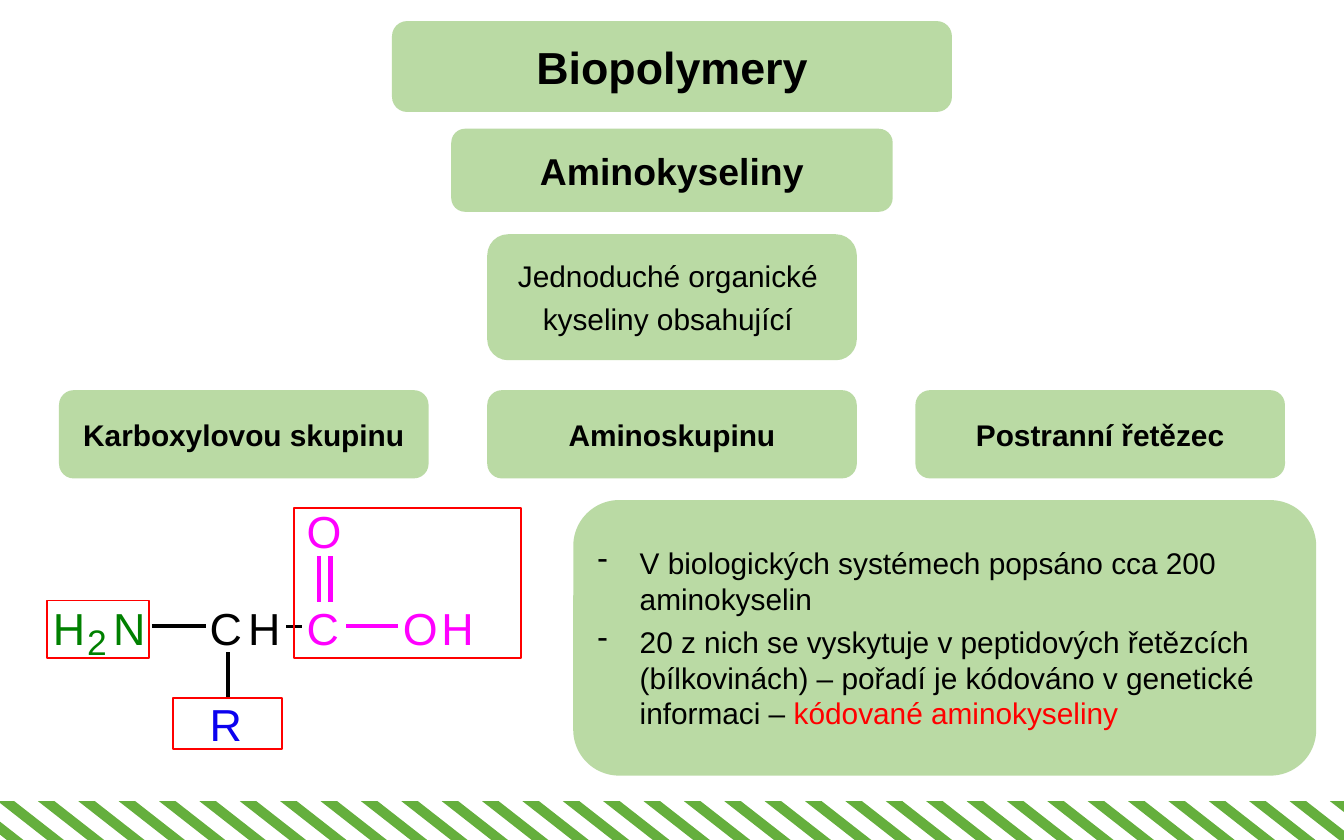
from typing import NamedTuple

from lxml.etree import SubElement as sub
from pptx import Presentation
from pptx.dml.color import RGBColor as RGB
from pptx.enum.shapes import MSO_CONNECTOR as LINK, MSO_SHAPE as FORM
from pptx.enum.text import MSO_ANCHOR as ANCHOR, MSO_AUTO_SIZE as FIT, PP_ALIGN as ALIGN
from pptx.oxml.ns import qn
from pptx.util import Pt

WIDE, HIGH = 720, 450
LEAF, GRASS = "A9D18E", "65AF3D"
BLACK, RED, PINK, GREEN, BLUE = "000000", "FF0000", "FF00FF", "008000", "0C01EF"
Point = tuple[float, float]


class Box(NamedTuple):
    x: float
    y: float
    w: float
    h: float


class Card(NamedTuple):
    box: Box
    lines: list[str]
    size: float
    bold: bool = True


class Bond(NamedTuple):
    start: Point
    end: Point
    color: str
    width: float = 2.25


class Atom(NamedTuple):
    text: str
    mid: float
    top: float
    color: str
    size: float = 24


def mid_box(y: float, w: float, h: float, shift: float = 0) -> Box:
    return Box((WIDE - w) / 2 + shift, y, w, h)


CARDS = [
    Card(mid_box(11.3, 300, 48.7), ["Biopolymery"], 24),
    Card(mid_box(125.5, 198, 67.5), ["Jednoduché organické ", "kyseliny obsahující "], 16, False),
    Card(mid_box(69, 236.5, 44.5), ["Aminokyseliny"], 20),
] + [
    Card(mid_box(209, 198, 47.3, 229.4 * step), [text], 16)
    for step, text in zip((-1, 0, 1), ("Karboxylovou skupinu", "Aminoskupinu", "Postranní řetězec"))
]
NOTE = Box(307.1, 267.9, 398, 147.6)

ROW, AXIS = 321.8, 335.5
BONDS = [
    Bond((81.4, AXIS), (110.4, AXIS), BLACK),
    Bond((153.4, AXIS), (162, AXIS), BLACK, 1.5),
    Bond((122.2, 349.5), (122.2, 373.6), BLACK),
    Bond((185.5, AXIS), (213, AXIS), PINK),
    Bond((170.7, 322.5), (170.7, 298), PINK),
    Bond((177.1, 322.5), (177.1, 298), PINK),
]
ATOMS = [
    Atom("H", 36.3, ROW, GREEN),
    Atom("2", 53, 332, GREEN, 19),
    Atom("N", 68.7, ROW, GREEN),
    Atom("C", 120.4, ROW, BLACK),
    Atom("H", 141, ROW, BLACK),
    Atom("C", 172.3, ROW, PINK),
    Atom("R", 120.4, 373, BLUE),
    Atom("O", 223.8, ROW, PINK),
    Atom("H", 244.5, ROW, PINK),
    Atom("O", 172.3, 270, PINK),
]
FRAMES = [
    Box(157.5, 272.2, 121.8, 80.5),
    Box(25.2, 321.7, 54.7, 31),
    Box(92.7, 374, 58.5, 27.2),
]


def paint(fill, color: str) -> None:
    fill.solid()
    fill.fore_color.rgb = RGB.from_string(color)


def write(frame, text: str, *, size: float = 16, color: str = BLACK, bold: bool = False,
          align=ALIGN.LEFT, gap: float = 0, dash: bool = False, join: bool = False) -> None:
    para = frame.paragraphs[-1]
    if not join:
        if para.runs:
            para = frame.add_paragraph()
            para.space_before = Pt(gap)
        para.alignment = align
        if dash:
            props = para._p.get_or_add_pPr()
            props.set("marL", str(Pt(22.5)))
            props.set("indent", str(-Pt(22.5)))
            sub(props, qn("a:buChar")).set("char", "-")
    run = para.add_run()
    run.text = text
    run.font.name, run.font.size, run.font.bold = "Arial", Pt(size), bold
    paint(run.font.fill, color)


def add_panel(slide, box: Box):
    shape = slide.shapes.add_shape(FORM.ROUNDED_RECTANGLE, *map(Pt, box))
    shape.shadow.inherit = False
    paint(shape.fill, LEAF)
    tint = shape.element.spPr.find(".//" + qn("a:srgbClr"))
    sub(tint, qn("a:alpha")).set("val", "80000")
    shape.line.fill.background()
    frame = shape.text_frame
    frame.word_wrap = True
    frame.vertical_anchor = ANCHOR.MIDDLE
    frame.margin_left = frame.margin_right = Pt(5.9)
    frame.margin_top = frame.margin_bottom = Pt(2.95)
    return frame


def add_card(slide, card: Card) -> None:
    frame = add_panel(slide, card.box)
    for line in card.lines:
        write(frame, line, size=card.size, bold=card.bold, align=ALIGN.CENTER, gap=3.7)


def add_bond(slide, bond: Bond) -> None:
    line = slide.shapes.add_connector(LINK.STRAIGHT, *map(Pt, bond.start + bond.end))
    paint(line.line.fill, bond.color)
    line.line.width = Pt(bond.width)
    sub(line._element.spPr, qn("a:effectLst"))


def add_atom(slide, atom: Atom) -> None:
    wide = atom.size * 2 / 3
    frame = slide.shapes.add_textbox(
        Pt(atom.mid - wide / 2), Pt(atom.top), Pt(wide), Pt(atom.size * 1.1)).text_frame
    frame.margin_left = frame.margin_right = frame.margin_top = frame.margin_bottom = Pt(0)
    frame.word_wrap = False
    frame.auto_size = FIT.SHAPE_TO_FIT_TEXT
    write(frame, atom.text, size=atom.size, color=atom.color)


def add_frame(slide, box: Box) -> None:
    shape = slide.shapes.add_shape(FORM.RECTANGLE, *map(Pt, box))
    shape.shadow.inherit = False
    shape.fill.background()
    paint(shape.line.fill, RED)
    shape.line.width = Pt(1)


def clip(points: list[Point], edge: float, sign: int) -> list[Point]:
    kept = []
    for (ax, ay), (bx, by) in zip(points, points[1:] + points[:1]):
        if sign * (ax - edge) >= 0:
            kept.append((ax, ay))
        if (ax - edge) * (bx - edge) < 0:
            kept.append((edge, ay + (by - ay) * (edge - ax) / (bx - ax)))
    return kept


def add_stripe(slide, x: float) -> None:
    top, wide, lean = 429.2, 8.9, 26.6
    points = [(x, top), (x + wide, top), (x + wide + lean, HIGH), (x + lean, HIGH)]
    points = clip(clip(points, 0, 1), WIDE, -1)
    spots = [(Pt(px), Pt(py)) for px, py in points]
    path = slide.shapes.build_freeform(*spots[0])
    path.add_line_segments(spots[1:], close=True)
    shape = path.convert_to_shape()
    shape.shadow.inherit = False
    paint(shape.fill, GRASS)
    shape.line.fill.background()


def main() -> None:
    deck = Presentation()
    deck.slide_width, deck.slide_height = Pt(WIDE), Pt(HIGH)
    slide = deck.slides.add_slide(deck.slide_layouts[6])
    for step in range(-1, 34):
        add_stripe(slide, 21.63 * step - 1.3)
    for card in CARDS:
        add_card(slide, card)
    for bond in BONDS:
        add_bond(slide, bond)
    for atom in ATOMS:
        add_atom(slide, atom)
    for box in FRAMES:
        add_frame(slide, box)
    note = add_panel(slide, NOTE)
    write(note, "V biologických systémech popsáno cca 200 aminokyselin", dash=True)
    write(note, "20 z nich se vyskytuje v peptidových řetězcích (bílkovinách) – pořadí je "
          "kódováno v genetické informaci – ", dash=True, gap=3.7)
    write(note, "kódované aminokyseliny", color=RED, join=True)
    deck.save("out.pptx")


if __name__ == "__main__":
    main()
